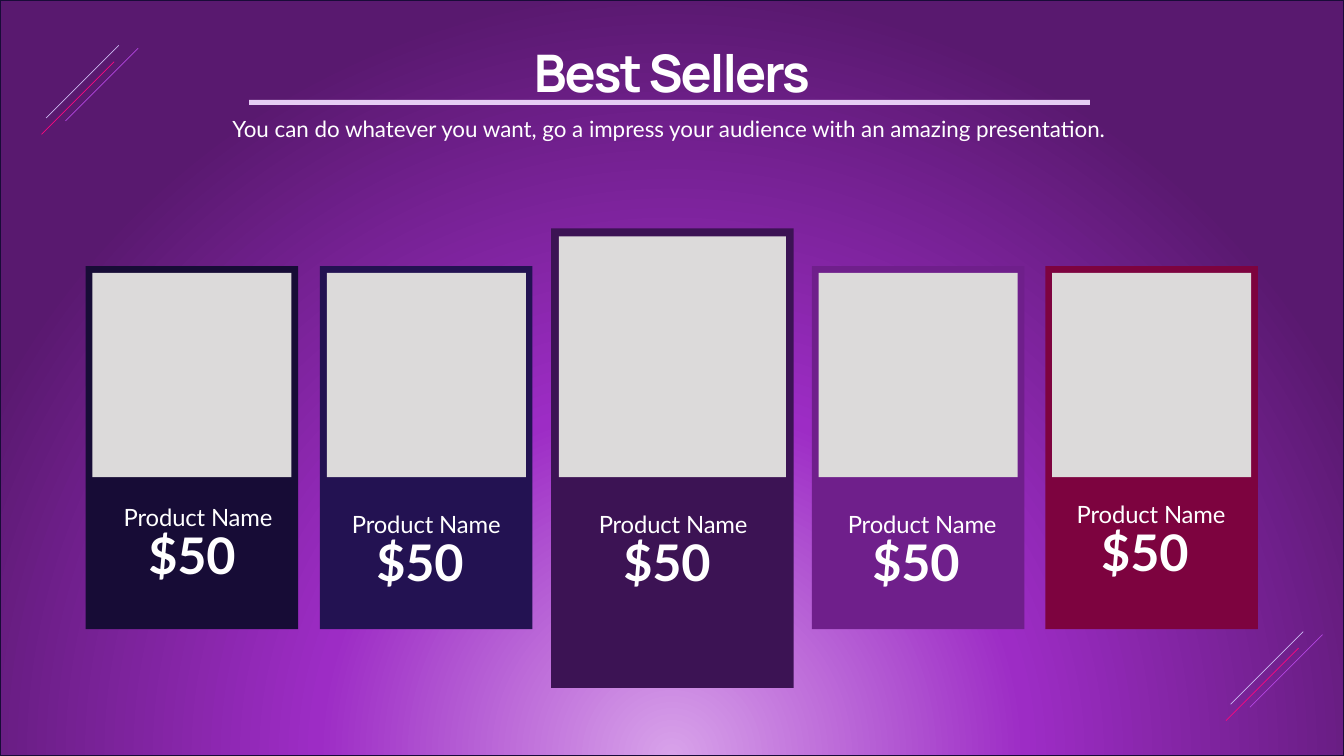
import dataclasses

import lxml.etree
import pptx
import pptx.dml.color
import pptx.enum.shapes
import pptx.enum.text
import pptx.oxml
import pptx.oxml.ns
import pptx.util

SHAPES = pptx.enum.shapes.MSO_SHAPE
ALIGN = pptx.enum.text.PP_ALIGN
ANCHOR = pptx.enum.text.MSO_ANCHOR
COLUMNS, ROWS = 160, 90


@dataclasses.dataclass(frozen=True)
class Theme:
    heading_font: str = "Manrope"
    body_font: str = "Lato"
    title_size: int = 37
    subtitle_size: int = 16
    name_size: int = 17
    price_size: int = 36
    text: str = "FFFFFF"
    rule: str = "E6CDF4"
    frame: str = "190B38"
    photo: str = "DCDADA"
    glow: tuple = ((0, "D8A2EA"), (46, "9D2CC5"), (100, "59196F"))
    cards: tuple = ("170C36", "231252", "3C1354", "6F1F8B", "7D033F")
    streaks: tuple = ("CBB9F1", "F9087E", "B346E0")


class Page:
    """Places styled elements on one page, measured in columns and rows."""

    def __init__(self, deck, theme):
        self.theme = theme
        self.shapes = deck.slides.add_slide(deck.slide_layouts[6]).shapes
        self.column = deck.slide_width / COLUMNS
        self.row = deck.slide_height / ROWS

    def place(self, left, top, right, bottom):
        return (round(left * self.column), round(top * self.row),
                round(right * self.column), round(bottom * self.row))

    def color(self, value):
        return pptx.dml.color.RGBColor.from_string(value)

    def rectangle(self, left, top, width, height, fill):
        shape = self.shapes.add_shape(
            SHAPES.RECTANGLE, *self.place(left, top, width, height))
        shape.shadow.inherit = False
        shape.fill.solid()
        shape.fill.fore_color.rgb = self.color(fill)
        shape.line.fill.background()
        return shape

    def backdrop(self):
        shape = self.rectangle(0, 0, COLUMNS, ROWS, self.theme.frame)
        shape.line.color.rgb = self.color(self.theme.frame)
        shape.line.width = pptx.util.Pt(1)
        stops = "".join(
            f'<a:gs pos="{share * 1000}"><a:srgbClr val="{value}"/></a:gs>'
            for share, value in self.theme.glow)
        gradient = pptx.oxml.parse_xml(
            f'<a:gradFill {pptx.oxml.ns.nsdecls("a")}><a:gsLst>{stops}</a:gsLst>'
            '<a:path path="circle"><a:fillToRect l="50000" t="130000" '
            'r="50000" b="-30000"/></a:path></a:gradFill>')
        properties = shape._element.spPr
        solid = properties.find(pptx.oxml.ns.qn("a:solidFill"))
        properties.replace(solid, gradient)

    def streak(self, left, bottom, length, color):
        line = self.shapes.add_connector(
            pptx.enum.shapes.MSO_CONNECTOR.STRAIGHT,
            *self.place(left, bottom, left + length, bottom - length))
        line.line.color.rgb = self.color(color)
        line.line.width = pptx.util.Pt(0.5)
        lxml.etree.SubElement(line._element.spPr,
                              pptx.oxml.ns.qn("a:effectLst"))

    def text(self, words, left, top, width, height, size, font=None,
             align=ALIGN.CENTER, anchor=ANCHOR.TOP, bold=False,
             leading=None, tracking=0):
        box = self.shapes.add_textbox(*self.place(left, top, width, height))
        frame = box.text_frame
        frame.text = words
        frame.word_wrap = True
        frame.auto_size = pptx.enum.text.MSO_AUTO_SIZE.SHAPE_TO_FIT_TEXT
        frame.vertical_anchor = anchor
        para = frame.paragraphs[0]
        para.alignment = align
        if leading:
            para.line_spacing = pptx.util.Pt(leading)
        span = para.runs[0]
        span.font.name = font or self.theme.body_font
        span.font.size = pptx.util.Pt(size)
        span.font.bold = bold
        span.font.color.rgb = self.color(self.theme.text)
        if tracking:
            span.font._element.set("spc", str(round(tracking * 100)))

    def card(self, left, top, width, height, margin, color):
        photo_bottom = 56.8
        self.rectangle(left, top, width, height, color)
        self.rectangle(left + margin, top + margin, width - 2 * margin,
                       photo_bottom - top - margin, self.theme.photo)

    def label(self, name, price, left, top):
        width = 20.4
        self.text(name, left, top, width, 4.7, self.theme.name_size,
                  align=ALIGN.LEFT, anchor=ANCHOR.BOTTOM, tracking=-0.1)
        self.text(price, left - 0.9, top + 6.84, width, 4.8,
                  self.theme.price_size, bold=True, leading=18, tracking=-0.1)


def main():
    deck = pptx.Presentation()
    deck.slide_width = pptx.util.Inches(13.33)
    deck.slide_height = pptx.util.Inches(7.5)
    theme = Theme()
    page = Page(deck, theme)
    page.backdrop()

    # Product cards, the middle one larger
    card_lefts = (10.2, 38.1, 65.6, 96.65, 124.45)
    for index, (left, color) in enumerate(zip(card_lefts, theme.cards)):
        if index == 2:
            page.card(left, 27.2, 28.9, 54.7, 0.95, color)
        else:
            page.card(left, 31.7, 25.3, 43.2, 0.8, color)

    # Heading
    page.text("Best Sellers", 10, 4.2, 140, 8.64, theme.title_size,
              font=theme.heading_font, anchor=ANCHOR.BOTTOM, bold=True,
              tracking=-1.4)
    page.text("You can do whatever you want, go a impress your audience "
              "with an amazing presentation. ", 10, 13.2, 140, 4.44,
              theme.subtitle_size, leading=18.5)
    page.rectangle(29.65, 11.9, 100.1, 0.6, theme.rule)

    # Names and prices
    label_spots = ((13.55, 59.15), (40.7, 60), (70.1, 60), (99.75, 60),
                   (127, 58.8))
    for left, top in label_spots:
        page.label("Product Name", "$50", left, top)

    # Diagonal streaks in two opposite corners
    streak_starts = ((5.5, 14.05), (4.95, 16), (7.8, 14.4))
    for across, down in ((0, 0), (141, 69.8)):
        for (left, bottom), color in zip(streak_starts, theme.streaks):
            page.streak(left + across, bottom + down, 8.65, color)

    deck.save("out.pptx")


if __name__ == "__main__":
    main()
